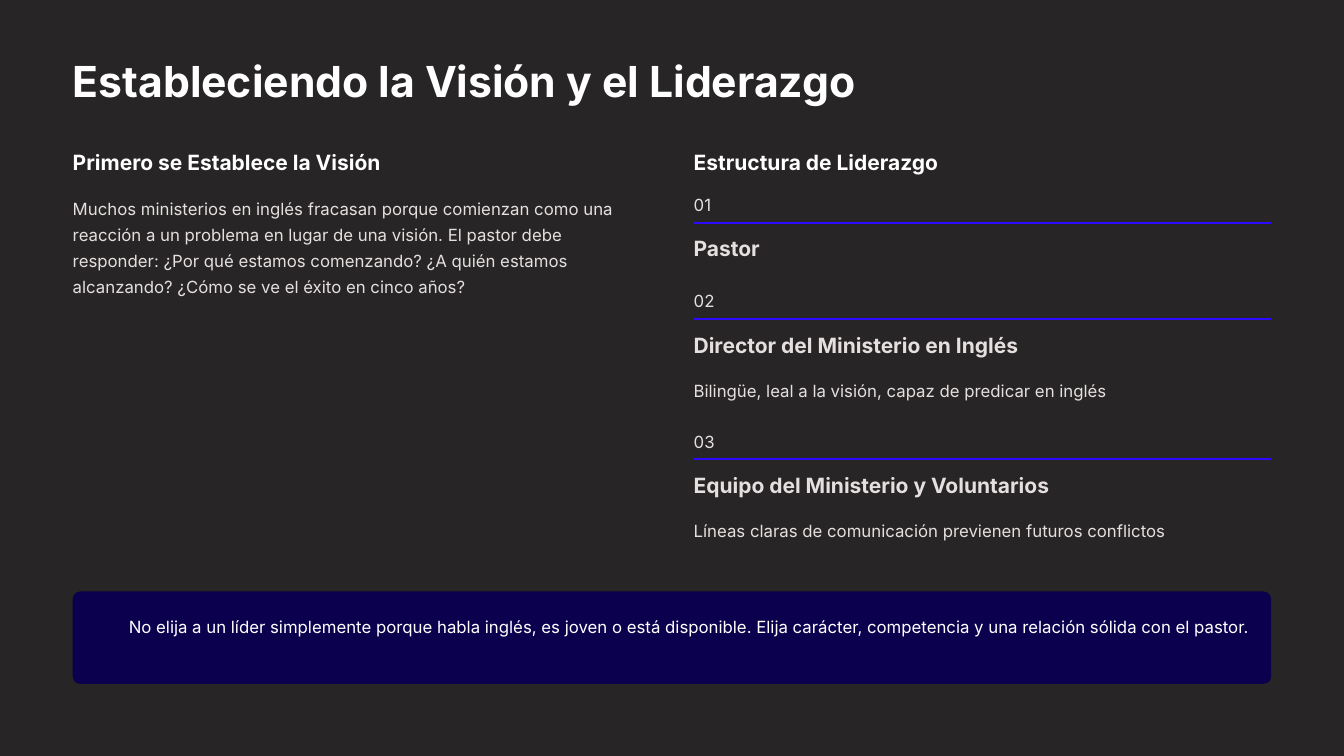
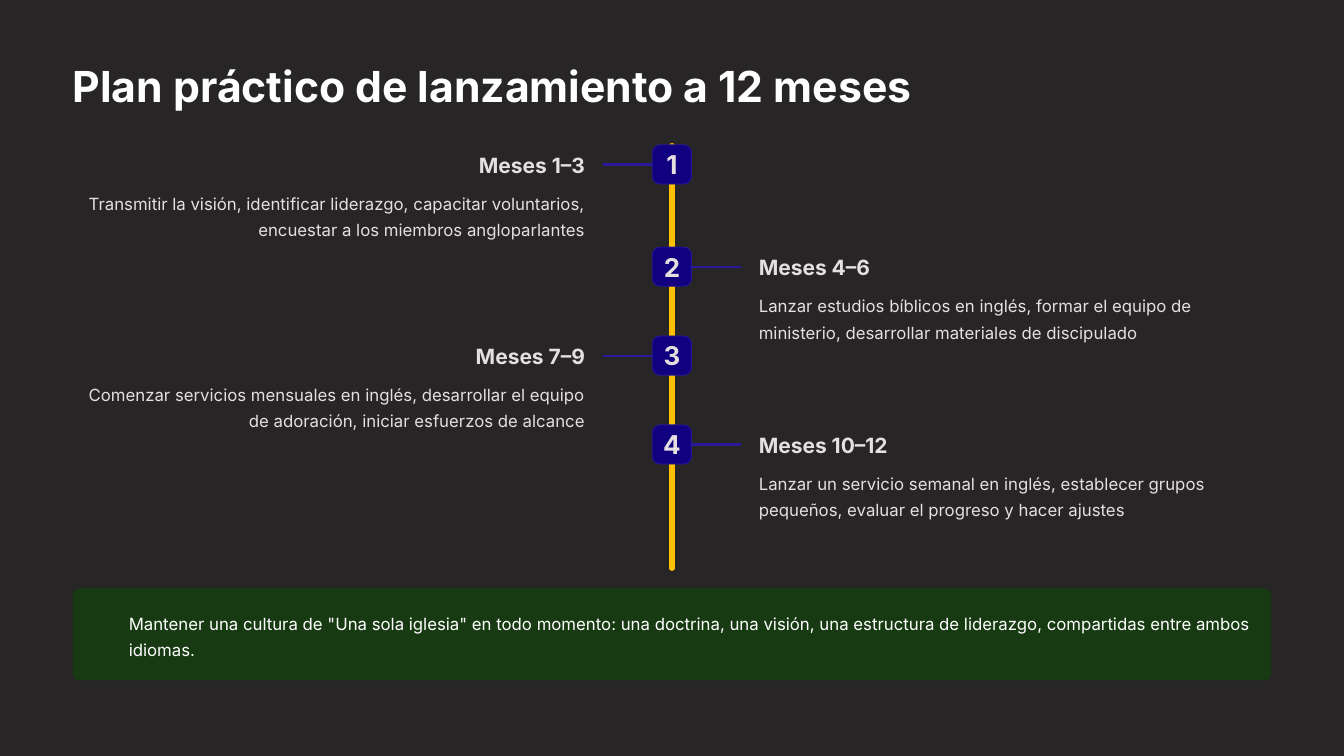
from pptx import Presentation
from pptx.dml.color import RGBColor
from pptx.enum.shapes import MSO_CONNECTOR as Conn, MSO_SHAPE as Shape
from pptx.enum.text import MSO_ANCHOR as Anchor, MSO_AUTO_SIZE as Auto, PP_ALIGN as Align
from pptx.oxml.xmlchemy import OxmlElement
from pptx.util import Pt

DARK = RGBColor(0x27, 0x25, 0x25)
WHITE = RGBColor(0xFF, 0xFF, 0xFF)
PALE = RGBColor(0xE5, 0xE0, 0xDF)
BLUE = RGBColor(0x2B, 0x0A, 0xFF)
INDIGO = RGBColor(0x2A, 0x19, 0x99)
ROYAL = RGBColor(0x11, 0x00, 0x80)
NAVY = RGBColor(0x0A, 0x00, 0x4D)
GREEN = RGBColor(0x18, 0x3A, 0x13)
GOLD = RGBColor(0xFF, 0xC0, 0x00)

FONT = "Inter"
LEFT, RIGHT = 52, 908
COL = 412.5
COL2 = RIGHT - COL
MID = 480
GAP = 62
SIDE = MID - GAP - LEFT
BADGE = 28

STEPS = [
    ("Pastor", None),
    ("Director del Ministerio en Inglés",
     "Bilingüe, leal a la visión, capaz de predicar en inglés"),
    ("Equipo del Ministerio y Voluntarios",
     "Líneas claras de comunicación previenen futuros conflictos"),
]
PHASES = [
    (103.5, "Meses 1–3", "Transmitir la visión, identificar liderazgo, capacitar "
     "voluntarios, encuestar a los miembros angloparlantes"),
    (176.5, "Meses 4–6", "Lanzar estudios bíblicos en inglés, formar el equipo de "
     "ministerio, desarrollar materiales de discipulado"),
    (240, "Meses 7–9", "Comenzar servicios mensuales en inglés, desarrollar el "
     "equipo de adoración, iniciar esfuerzos de alcance"),
    (303.5, "Meses 10–12", "Lanzar un servicio semanal en inglés, establecer grupos "
     "pequeños, evaluar el progreso y hacer ajustes"),
]


def place(shape, x, y, w, h):
    shape.left, shape.top, shape.width, shape.height = Pt(x), Pt(y), Pt(w), Pt(h)


def write(shape, text, size, color, bold=False, space=1.0, align=Align.LEFT,
          anchor=Anchor.TOP, pads=(0, 0, 0), wrap=True):
    """Fill a shape with one paragraph; pads are left, top and right."""
    frame = shape.text_frame
    frame.auto_size = Auto.NONE
    frame.word_wrap = wrap
    frame.vertical_anchor = anchor
    frame.margin_left, frame.margin_top, frame.margin_right = map(Pt, pads)
    frame.margin_bottom = 0
    frame.text = text
    para = frame.paragraphs[0]
    para.alignment = align
    para.line_spacing = space
    font = para.font
    font.name, font.size, font.bold = FONT, Pt(size), bold
    font.color.rgb = color


def label(slide, text, x, y, w, h, size=12, color=PALE, **style):
    box = slide.shapes.add_textbox(Pt(x), Pt(y), Pt(w), Pt(h))
    write(box, text, size, color, **style)


def head(slide, text, x, y, w, color=PALE, align=Align.LEFT):
    label(slide, text, x, y, w, 19.5, 15, color, bold=True, space=1.04, align=align)


def body(slide, text, x, y, w, lines, align=Align.LEFT):
    label(slide, text, x, y, w, 19.5 * lines, space=1.3, align=align)


def line(slide, x1, y1, x2, y2, color, width, cap="flat"):
    link = slide.shapes.add_connector(Conn.STRAIGHT, Pt(x1), Pt(y1), Pt(x2), Pt(y2))
    link.line.color.rgb = color
    link.line.width = Pt(width)
    link.get_or_add_ln().set("cap", cap)
    link.element.spPr.append(OxmlElement("a:effectLst"))
    return link


def panel(slide, x, y, w, h, fill, adj):
    """Rounded box without shadow or outline."""
    box = slide.shapes.add_shape(Shape.ROUNDED_RECTANGLE, Pt(x), Pt(y), Pt(w), Pt(h))
    box.adjustments[0] = adj
    box.shadow.inherit = False
    box.fill.solid()
    box.fill.fore_color.rgb = fill
    box.line.fill.background()
    return box


def note(slide, text, y, fill):
    box = panel(slide, LEFT, y, RIGHT - LEFT, 66, fill, 0.08)
    write(box, text, 12, WHITE, space=1.3, pads=(38.5, 12.2, 10.5))


def start(prs, title, y):
    slide = prs.slides.add_slide(prs.slide_layouts[5])
    place(slide.shapes.title, LEFT, y, RIGHT - LEFT, 39)
    write(slide.shapes.title, title, 30.5, WHITE, bold=True, space=1.04, wrap=False)
    return slide


def vision(prs):
    slide = start(prs, "Estableciendo la Visión y el Liderazgo", 38)
    head(slide, "Primero se Establece la Visión", LEFT, 106, COL, WHITE)
    body(slide, "Muchos ministerios en inglés fracasan porque comienzan como una "
         "reacción a un problema en lugar de una visión. El pastor debe responder: "
         "¿Por qué estamos comenzando? ¿A quién estamos alcanzando? ¿Cómo se ve el "
         "éxito en cinco años?", LEFT, 137.5, COL, 4)
    head(slide, "Estructura de Liderazgo", COL2, 106, COL, WHITE)
    y = 139
    for num, (name, text) in enumerate(STEPS, 1):
        label(slide, f"{num:02}", COL2, y, 24, 15)
        line(slide, COL2, y + 20, RIGHT, y + 20, BLUE, 1.5)
        head(slide, name, COL2, y + 28.5, COL)
        if text:
            body(slide, text, COL2, y + 60, COL, 1)
        y += 100 if text else 69
    note(slide, "No elija a un líder simplemente porque habla inglés, es joven o "
         "está disponible. Elija carácter, competencia y una relación sólida con "
         "el pastor.", 422.5, NAVY)


def phase(slide, num, y, name, text):
    """Badge on the axis, with its text on the left for odd numbers."""
    odd = num % 2
    x = LEFT if odd else MID + GAP
    align = Align.RIGHT if odd else Align.LEFT
    badge = panel(slide, MID - BADGE / 2, y, BADGE, BADGE, ROYAL, 0.19)
    badge.line.color.rgb = INDIGO
    badge.line.width = Pt(0.5)
    write(badge, str(num), 18.5, PALE, bold=True, align=Align.CENTER,
          anchor=Anchor.MIDDLE, wrap=False)
    mid = y + BADGE / 2
    stub = line(slide, MID, mid, MID + (-49 if odd else 49), mid, INDIGO, 1.5, "rnd")
    stub.begin_connect(badge, 1 if odd else 3)
    head(slide, name, x, y + 4.5, SIDE, align=align)
    body(slide, text, x, y + 30.7, SIDE, 2, align)


def plan(prs):
    slide = start(prs, "Plan práctico de lanzamiento a 12 meses", 41)
    line(slide, MID, 104, MID, 406, GOLD, 3.6, "rnd")
    for num, (y, name, text) in enumerate(PHASES, 1):
        phase(slide, num, y, name, text)
    note(slide, 'Mantener una cultura de "Una sola iglesia" en todo momento: una '
         "doctrina, una visión, una estructura de liderazgo, compartidas entre "
         "ambos idiomas.", 420, GREEN)


def main():
    prs = Presentation()
    prs.slide_width, prs.slide_height = Pt(960), Pt(540)
    back = prs.slide_master.background.fill
    back.solid()
    back.fore_color.rgb = DARK
    vision(prs)
    plan(prs)
    prs.save("out.pptx")


if __name__ == "__main__":
    main()
